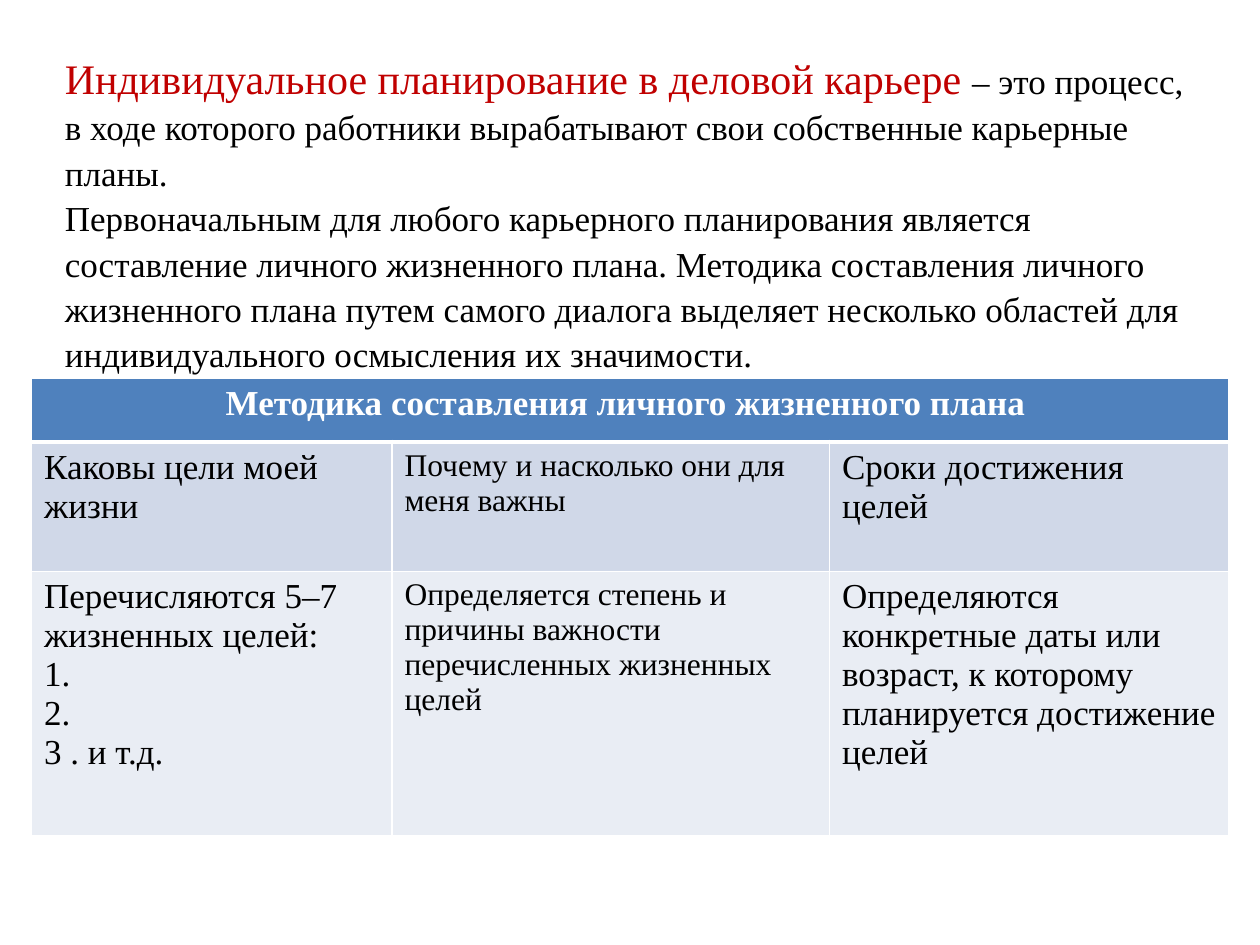
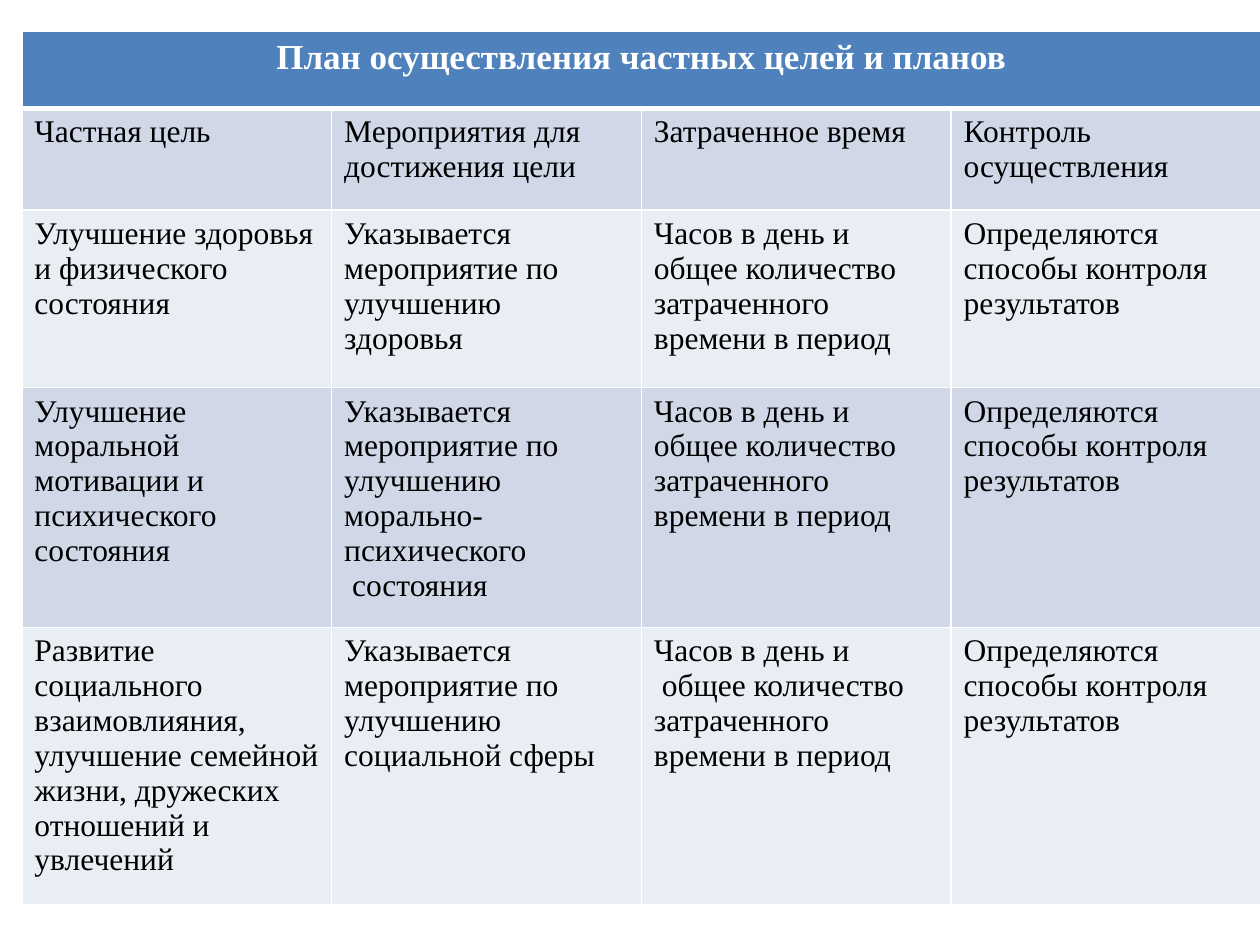
from pptx import Presentation
from pptx.dml.color import RGBColor
from pptx.enum.text import MSO_AUTO_SIZE as AutoSize, PP_ALIGN as Align
from pptx.oxml import parse_xml
from pptx.oxml.ns import nsdecls
from pptx.util import Pt

FONT = "Times New Roman"
WHITE = RGBColor(0xFF, 0xFF, 0xFF)
BLACK = RGBColor(0, 0, 0)
RED = RGBColor(0xC0, 0, 0)
HEADER_BLUE = RGBColor(0x4F, 0x81, 0xBD)
BANDS = (RGBColor(0xD0, 0xD8, 0xE8), RGBColor(0xE9, 0xED, 0xF4))

TERM = {"name": FONT, "size": Pt(24), "color": RED}
BODY = {"name": FONT, "size": Pt(20), "color": BLACK}
HEADER = {"name": FONT, "size": Pt(20), "color": WHITE, "bold": True}
CELL = {"name": FONT, "color": BLACK, "bold": False}

INTRO = [
    [("Индивидуальное планирование в деловой карьере ", TERM),
     ("– это процесс, в ходе которого работники вырабатывают свои "
      "собственные карьерные планы.", BODY)],
    [("Первоначальным для любого карьерного планирования является "
      "составление личного жизненного плана. Методика составления личного "
      "жизненного плана путем самого диалога выделяет несколько областей "
      "для индивидуального осмысления их значимости.", BODY)],
]

LIFE_PLAN = [
    ["Каковы цели моей жизни",
     "Почему и насколько они для меня важны",
     "Сроки достижения целей"],
    ["Перечисляются 5–7 жизненных целей:\n1.\n2.\n3 . и т.д.",
     "Определяется степень и причины важности перечисленных жизненных целей",
     "Определяются конкретные даты или возраст, к которому планируется "
     "достижение целей"],
]

ACTION = "Указывается мероприятие по улучшению\n"
HOURS = "Часов в день и\nобщее количество затраченного времени в период"
CONTROL = "Определяются способы контроля результатов"
GOAL_PLAN = [
    ["Частная цель", "Мероприятия для достижения цели",
     "Затраченное время", "Контроль\nосуществления"],
    ["Улучшение здоровья и физического состояния",
     ACTION + "здоровья", HOURS, CONTROL],
    ["Улучшение моральной\nмотивации и психического состояния",
     ACTION + "морально-психического\n состояния", HOURS, CONTROL],
    ["Развитие социального взаимовлияния, улучшение семейной жизни, "
     "дружеских отношений и увлечений",
     ACTION + "социальной сферы", HOURS.replace("\n", "\n "), CONTROL],
]


def style_font(font, style):
    for name, value in style.items():
        if name == "color":
            font.color.rgb = value
        else:
            setattr(font, name, value)


def add_intro(page, box, paragraphs):
    shape = page.shapes.add_textbox(*map(Pt, box))
    frame = shape.text_frame
    frame.word_wrap = True
    frame.auto_size = AutoSize.SHAPE_TO_FIT_TEXT
    for index, spans in enumerate(paragraphs):
        para = frame.paragraphs[0] if index == 0 else frame.add_paragraph()
        para.line_spacing = 1.08
        for text, style in spans:
            span = para.add_run()
            span.text = text
            style_font(span.font, style)


def add_borders(cell, bottom=1):
    """Draw white lines round a cell; widths are in points."""
    properties = cell._tc.get_or_add_tcPr()
    for side, width in (("L", 1), ("R", 1), ("T", 1), ("B", bottom)):
        properties.append(parse_xml(
            f'<a:ln{side} {nsdecls("a")} w="{Pt(width)}"><a:solidFill>'
            f'<a:srgbClr val="{WHITE}"/></a:solidFill></a:ln{side}>'))


def fill_cell(cell, text, style, fill, align=Align.LEFT, bottom=1):
    cell.text = text
    for para in cell.text_frame.paragraphs:
        para.alignment = align
        for span in para.runs:
            style_font(span.font, style)
    add_borders(cell, bottom)
    cell.fill.solid()
    cell.fill.fore_color.rgb = fill


def add_plan_table(page, corner, heading, rows, widths, heights, sizes):
    """Place a banded table under one merged heading; sizes go by column."""
    box = (*corner, sum(widths), sum(heights))
    table = page.shapes.add_table(
        len(heights), len(widths), *map(Pt, box)).table
    for column, width in zip(table.columns, widths):
        column.width = Pt(width)
    for row, height in zip(table.rows, heights):
        row.height = Pt(height)

    header = table.cell(0, 0)
    header.merge(table.cell(0, len(widths) - 1))
    fill_cell(header, heading, HEADER, HEADER_BLUE, Align.CENTER, bottom=3)
    for cell in list(table.rows[0].cells)[1:]:
        add_borders(cell, bottom=3)
    for r, texts in enumerate(rows):
        for c, (text, size) in enumerate(zip(texts, sizes)):
            fill_cell(table.cell(r + 1, c), text,
                      {**CELL, "size": Pt(size)}, BANDS[r % 2])


def build_life_plan_slide(page):
    add_intro(page, (30, 24, 654, 204), INTRO)
    add_plan_table(page, (18, 216),
                   "Методика составления личного жизненного плана ",
                   LIFE_PLAN, widths=(206, 250, 228),
                   heights=(36.5, 74, 151), sizes=(20, 18, 20))


def build_goal_plan_slide(page):
    add_plan_table(page, (12.5, 18),
                   "План осуществления частных целей и планов",
                   GOAL_PLAN, widths=[177] * 4,
                   heights=(44, 58, 101.5, 137, 158), sizes=[18] * 4)


def main():
    deck = Presentation()
    deck.slide_width, deck.slide_height = Pt(720), Pt(540)
    blank = deck.slide_layouts[6]
    for build in (build_life_plan_slide, build_goal_plan_slide):
        build(deck.slides.add_slide(blank))
    deck.save("out.pptx")


if __name__ == "__main__":
    main()
